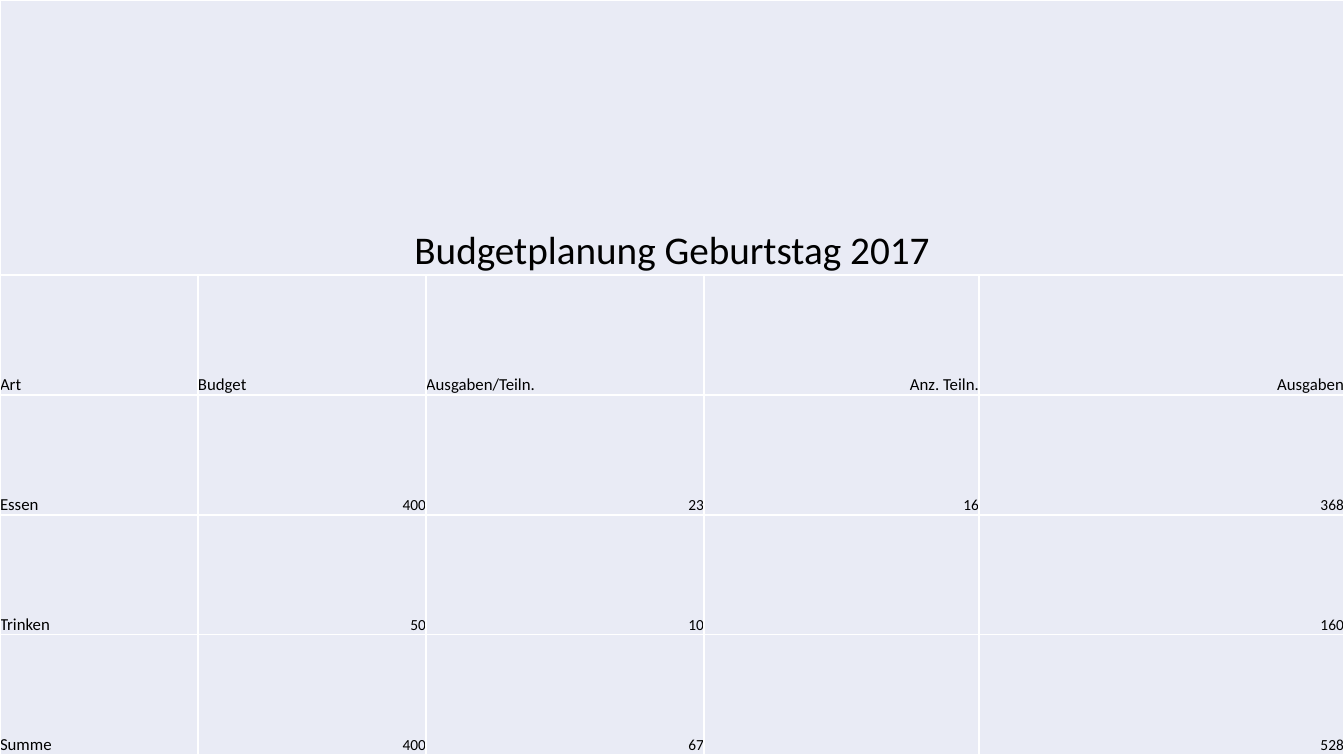
from typing import NamedTuple

import lxml.etree
import pptx
import pptx.dml.color
import pptx.enum.text
import pptx.oxml.ns
import pptx.table
import pptx.util

EMU_PER_PX = 914400 / 100.8
SLIDE_WIDTH, SLIDE_HEIGHT = 1344, 756
COLUMN_WIDTHS = (198, 228, 278, 275, 365)
ROW_HEIGHTS = (275, 120, 120, 120, 120)
FONT = "Calibri"
INK, CELL_FILL, GRID = "000000", "E9EBF5", "FFFFFF"
TITLE_SIZE, LABEL_SIZE, NUMBER_SIZE = 28, 12, 11
Align = pptx.enum.text.PP_ALIGN


class BudgetRow(NamedTuple):
    kind: str
    budget: str
    per_person: str
    people: str
    spending: str


TITLE = "Budgetplanung Geburtstag 2017"
HEADER = BudgetRow("Art", "Budget", "Ausgaben/Teiln.", "Anz. Teiln.", "Ausgaben")
HEADER_ALIGNMENTS = (Align.LEFT,) * 3 + (Align.RIGHT,) * 2
BUDGET_ROWS = (
    BudgetRow("Essen", "400", "23", "16", "368"),
    BudgetRow("Trinken", "50", "10", "", "160"),
    BudgetRow("Summe", "400", "67", "", "528"),
)


def px(length: int) -> pptx.util.Emu:
    return pptx.util.Emu(round(length * EMU_PER_PX))


def color(value: str) -> pptx.dml.color.RGBColor:
    return pptx.dml.color.RGBColor.from_string(value)


def style_cell(cell: pptx.table._Cell) -> None:
    cell.margin_left = cell.margin_top = cell.margin_right = cell.margin_bottom = 0
    cell.vertical_anchor = pptx.enum.text.MSO_ANCHOR.BOTTOM
    properties = cell._tc.get_or_add_tcPr()
    qn = pptx.oxml.ns.qn
    for side in ("lnL", "lnR", "lnT", "lnB"):
        line = lxml.etree.SubElement(properties, qn(f"a:{side}"), w=str(pptx.util.Pt(1)))
        fill = lxml.etree.SubElement(line, qn("a:solidFill"))
        lxml.etree.SubElement(fill, qn("a:srgbClr"), val=GRID)
    cell.fill.solid()
    cell.fill.fore_color.rgb = color(CELL_FILL)


def write_text(
    cell: pptx.table._Cell, text: str, *, size: int, alignment: Align
) -> None:
    paragraph = cell.text_frame.paragraphs[0]
    paragraph.alignment = alignment
    run = paragraph.add_run()
    run.text = text
    run.font.name = FONT
    run.font.size = pptx.util.Pt(size)
    run.font.color.rgb = color(INK)


def fill_row(
    table: pptx.table.Table,
    row_index: int,
    row: BudgetRow,
    sizes: tuple[int, ...],
    alignments: tuple[Align, ...],
) -> None:
    for column_index, (text, size, alignment) in enumerate(zip(row, sizes, alignments)):
        if text:
            cell = table.cell(row_index, column_index)
            write_text(cell, text, size=size, alignment=alignment)


def main() -> None:
    presentation = pptx.Presentation()
    presentation.slide_width = px(SLIDE_WIDTH)
    presentation.slide_height = px(SLIDE_HEIGHT)
    slide = presentation.slides.add_slide(presentation.slide_layouts[6])
    table = slide.shapes.add_table(
        len(ROW_HEIGHTS), len(COLUMN_WIDTHS), 0, 0, px(SLIDE_WIDTH), px(sum(ROW_HEIGHTS))
    ).table
    table.first_row = False
    table.horz_banding = False
    for column, width in zip(table.columns, COLUMN_WIDTHS):
        column.width = px(width)
    for row, height in zip(table.rows, ROW_HEIGHTS):
        row.height = px(height)
    for cell in table.iter_cells():
        style_cell(cell)

    title_cell = table.cell(0, 0)
    title_cell.merge(table.cell(0, len(COLUMN_WIDTHS) - 1))
    write_text(title_cell, TITLE, size=TITLE_SIZE, alignment=Align.CENTER)

    fill_row(table, 1, HEADER, (LABEL_SIZE,) * 5, HEADER_ALIGNMENTS)
    number_sizes = (LABEL_SIZE,) + (NUMBER_SIZE,) * 4
    number_alignments = (Align.LEFT,) + (Align.RIGHT,) * 4
    for row_index, budget_row in enumerate(BUDGET_ROWS, start=2):
        fill_row(table, row_index, budget_row, number_sizes, number_alignments)

    presentation.save("out.pptx")


if __name__ == "__main__":
    main()
